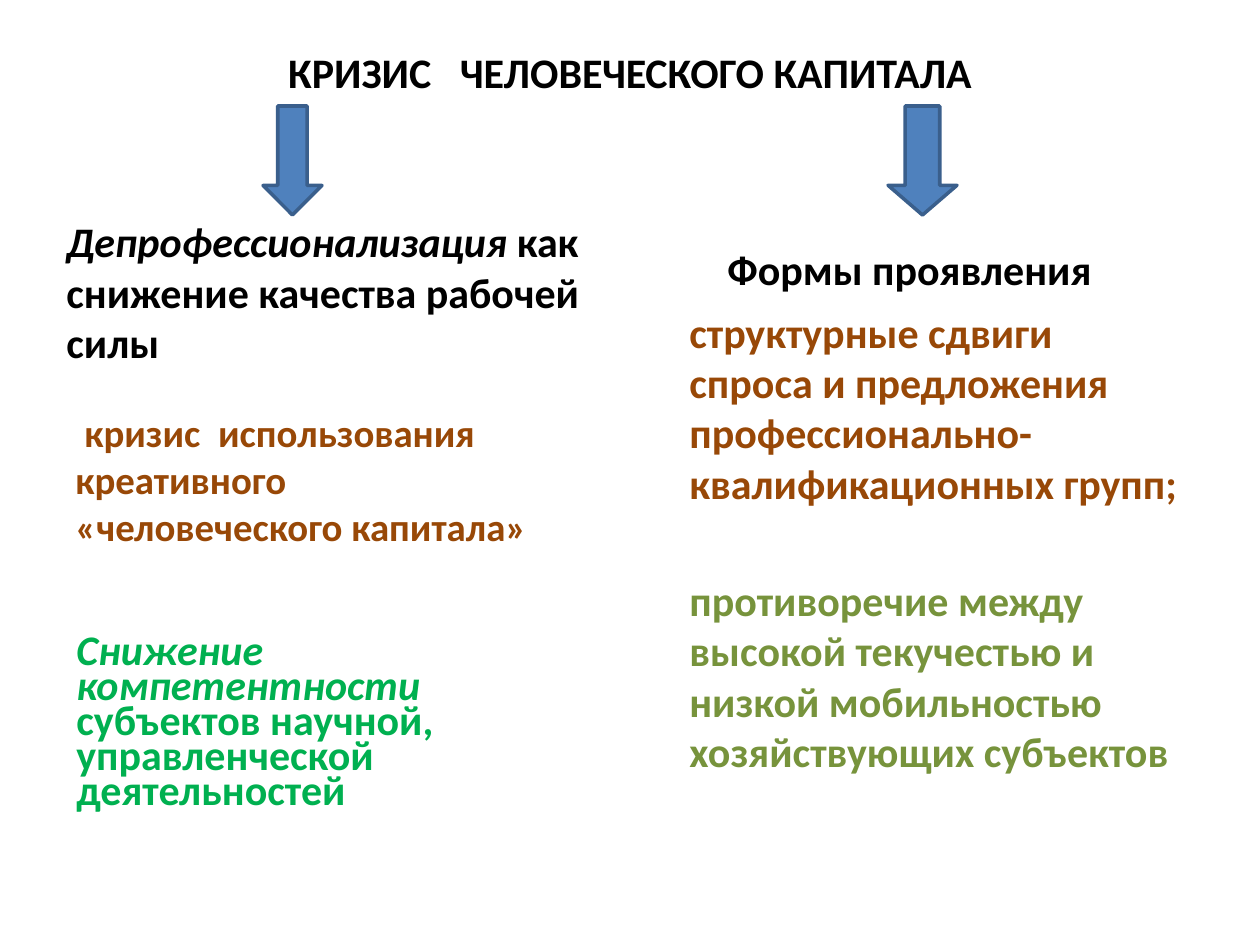
from dataclasses import dataclass

from pptx import Presentation
from pptx.dml.color import RGBColor
from pptx.enum.shapes import MSO_SHAPE
from pptx.enum.text import MSO_ANCHOR, MSO_AUTO_SIZE, PP_ALIGN
from pptx.util import Emu, Pt

DOWN_ARROW = MSO_SHAPE.DOWN_ARROW
TOP, MIDDLE, BOTTOM = MSO_ANCHOR.TOP, MSO_ANCHOR.MIDDLE, MSO_ANCHOR.BOTTOM
NO_AUTOFIT = MSO_AUTO_SIZE.NONE
CENTER, LEFT = PP_ALIGN.CENTER, PP_ALIGN.LEFT
TITLE_ONLY = 5
PX_PER_INCH = 126
FONT = "Calibri"

BLACK = RGBColor(0x00, 0x00, 0x00)
BROWN = RGBColor(0x98, 0x48, 0x07)
OLIVE = RGBColor(0x77, 0x93, 0x3C)
GREEN = RGBColor(0x00, 0xB0, 0x50)
BLUE = RGBColor(0x4F, 0x81, 0xBD)
DARK_BLUE = RGBColor(0x3A, 0x5F, 0x8C)


@dataclass(frozen=True)
class Box:
    left: int
    top: int
    width: int
    height: int


@dataclass(frozen=True)
class Run:
    text: str
    italic: bool = False
    tracking: float = 0


@dataclass(frozen=True)
class Para:
    runs: tuple[Run, ...]
    color: RGBColor = BLACK
    size: float = 24
    align: PP_ALIGN = LEFT
    margin: int = 0
    indent: int = 0
    before: float = 4.8
    line: float | None = None


@dataclass(frozen=True)
class Block:
    box: Box
    paras: tuple[Para, ...]
    anchor: MSO_ANCHOR = TOP


@dataclass(frozen=True)
class Arrow:
    box: Box
    head: float


TITLE = Block(
    Box(63, 38, 1134, 68),
    (Para((Run("КРИЗИС"), Run(" ", tracking=10.8), Run("ЧЕЛОВЕЧЕСКОГО КАПИТАЛА")),
          align=CENTER, before=0),),
    MIDDLE,
)

BLOCKS = (
    Block(
        Box(54, 214, 557, 159),
        (Para((Run("Депрофессионализация", italic=True),
               Run(" как снижение качества рабочей силы"))),),
        BOTTOM,
    ),
    Block(
        Box(63, 403, 488, 179),
        (Para((Run("кризис"), Run(" ", tracking=5),
               Run("использования креативного «человеческого капитала»")),
              BROWN, 22.2, indent=9, before=4.4),),
    ),
    Block(
        Box(640, 300, 557, 544),
        (
            Para((Run("структурные сдвиги спроса и предложения "
                      "профессионально-квалификационных групп;"),),
                 BROWN, margin=37),
            Para((Run("противоречие между высокой текучестью и низкой "
                      "мобильностью хозяйствующих субъектов"),),
                 OLIVE, margin=37, before=38),
        ),
    ),
    Block(Box(640, 212, 557, 88), (Para((Run("Формы проявления"),), margin=75),), BOTTOM),
    Block(
        Box(64, 631, 515, 189),
        (Para((Run("Снижение компетентности", italic=True),
               Run(" субъектов научной, управленческой деятельностей")),
              GREEN, line=20),),
        BOTTOM,
    ),
)

ARROWS = (
    Arrow(Box(263, 106, 59, 109), 0.5),
    Arrow(Box(888, 106, 69, 109), 0.43),
)


def px(n: int) -> Emu:
    """Turn pixels into EMU."""
    return Emu(round(n * 914400 / PX_PER_INCH))


def place(box: Box) -> tuple[Emu, Emu, Emu, Emu]:
    """Return the position and size of a box in EMU."""
    return px(box.left), px(box.top), px(box.width), px(box.height)


def fill_text(tf, block: Block) -> None:
    """Write the paragraphs of a block, run by run."""
    tf.word_wrap = True
    tf.auto_size = NO_AUTOFIT
    tf.vertical_anchor = block.anchor
    for i, para in enumerate(block.paras):
        p = tf.add_paragraph() if i else tf.paragraphs[0]
        p.alignment = para.align
        p.space_before = Pt(para.before)
        if para.line:
            p.line_spacing = Pt(para.line)
        pPr = p._p.get_or_add_pPr()
        pPr.set("marL", str(px(para.margin)))
        pPr.set("indent", str(px(para.indent)))
        for run in para.runs:
            r = p.add_run()
            r.text = run.text
            r.font.name = FONT
            r.font.size = Pt(para.size)
            r.font.bold = True
            r.font.italic = run.italic
            r.font.color.rgb = para.color
            if run.tracking:
                r._r.get_or_add_rPr().set("spc", str(round(run.tracking * 100)))


def add_title(s, block: Block) -> None:
    """Move and fill the title placeholder."""
    sp = s.shapes.title
    sp.left, sp.top, sp.width, sp.height = place(block.box)
    fill_text(sp.text_frame, block)


def add_block(s, block: Block) -> None:
    """Add a text box."""
    fill_text(s.shapes.add_textbox(*place(block.box)).text_frame, block)


def add_arrow(s, arrow: Arrow) -> None:
    """Add a block arrow pointing down."""
    sp = s.shapes.add_shape(DOWN_ARROW, *place(arrow.box))
    sp.shadow.inherit = False
    sp.adjustments[1] = arrow.head
    sp.fill.solid()
    sp.fill.fore_color.rgb = BLUE
    sp.line.color.rgb = DARK_BLUE
    sp.line.width = Pt(2)


def main() -> None:
    """Build the slide and save it."""
    prs = Presentation()
    prs.slide_width, prs.slide_height = px(1260), px(945)
    s = prs.slides.add_slide(prs.slide_layouts[TITLE_ONLY])
    add_title(s, TITLE)
    for block in BLOCKS:
        add_block(s, block)
    for arrow in ARROWS:
        add_arrow(s, arrow)
    prs.save("out.pptx")


if __name__ == "__main__":
    main()
